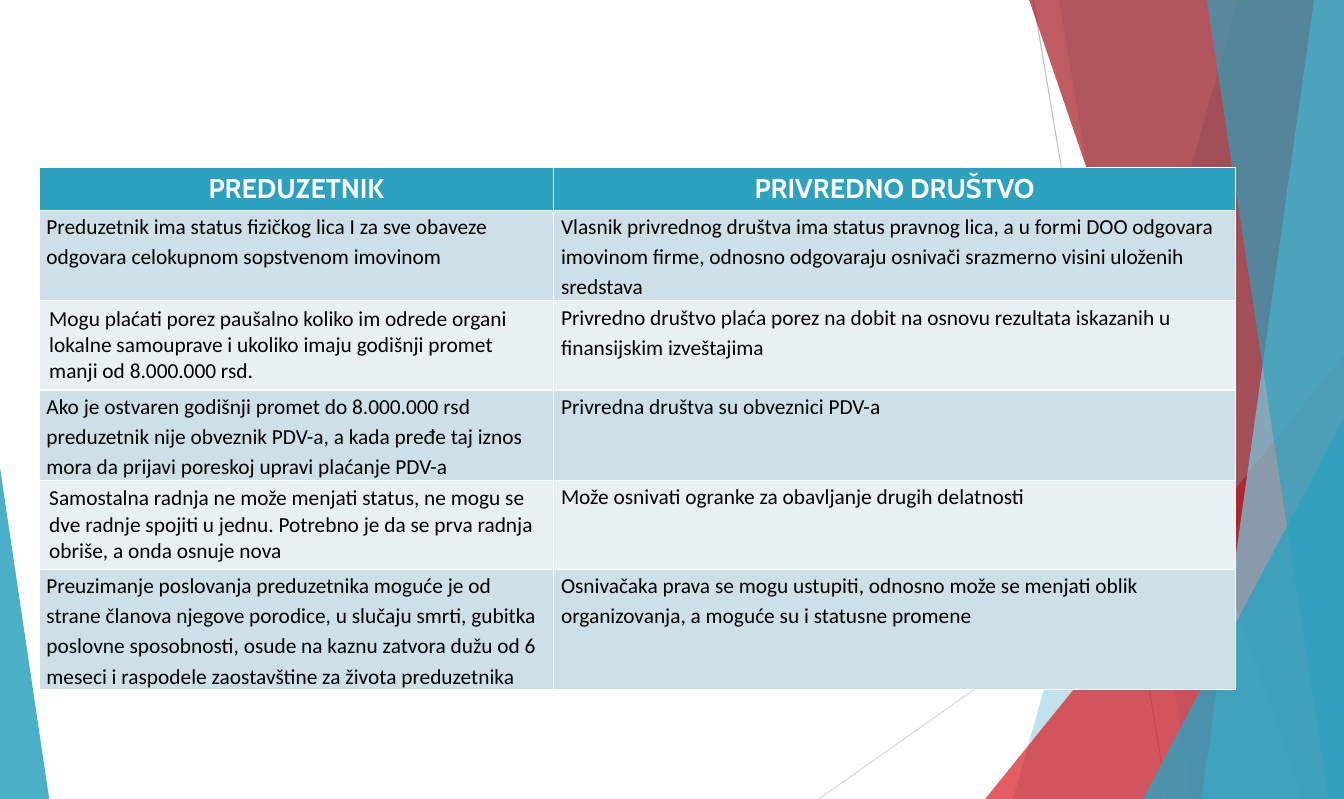
"""Build the slide comparing an entrepreneur with a company in Serbian law."""
from lxml import etree
from pptx import Presentation
from pptx.dml.color import RGBColor
from pptx.enum import shapes, text
from pptx.oxml import ns
from pptx.util import Cm, Pt

WHITE = RGBColor(0xFF, 0xFF, 0xFF)
BLACK = RGBColor(0, 0, 0)
TEAL = RGBColor(0x2D, 0xA2, 0xBF)
SKY = RGBColor(0x7A, 0xCB, 0xE0)
RED = RGBColor(0xDA, 0x1F, 0x28)
DARK_RED = RGBColor(0xA3, 0x17, 0x1E)
GREY = RGBColor(0xBF, 0xBF, 0xBF)
LIGHT_GREY = RGBColor(0xD9, 0xD9, 0xD9)
BAND = RGBColor(0xCD, 0xE0, 0xE8)
PALE = RGBColor(0xE8, 0xF0, 0xF4)
W, H = 33.3, 19.79


def write_cell(cell, words, fill, font="Calibri", size=15, color=BLACK, bold=False,
               align=text.PP_ALIGN.LEFT, spacing=None, inset=(0.25, 0.13)):
    cell.fill.solid()
    cell.fill.fore_color.rgb = fill
    cell.margin_left = cell.margin_right = Cm(inset[0])
    cell.margin_top = cell.margin_bottom = Cm(inset[1])
    p = cell.text_frame.paragraphs[0]
    p.alignment = align
    if spacing:
        p.line_spacing = spacing
    r = p.add_run()
    r.text = words
    r.font.name, r.font.size, r.font.bold = font, Pt(size), bold
    r.font.color.rgb = color


prs = Presentation()
prs.slide_width, prs.slide_height = Cm(W), Cm(H)
s = prs.slides.add_slide(prs.slide_layouts[6])

for x1, y1, x2, y2, color in [(25.6, 0, 28.93, H, GREY), (W, 10.62, 20.29, H, LIGHT_GREY)]:
    line = s.shapes.add_connector(shapes.MSO_CONNECTOR.STRAIGHT, Cm(x1), Cm(y1), Cm(x2), Cm(y2))
    line.line.color.rgb = color
    line.line.width = Pt(0.75)
    etree.SubElement(line._element.spPr, ns.qn("a:effectLst"))

facets = [
    ("band", (30.68, 25.1), TEAL, 30),
    ("band", (26.24, 29.54), TEAL, 20),
    ("triangle", (24.41, 8.79, 8.89, 1), RED, 72),
    ("band", (25.5, 32.26), DARK_RED, 70),
    ("band", (32.56, 29.77), SKY, 70),
    ("band", (29.9, 32.92), TEAL, 65),
    ("triangle", (28.32, 10.36, 4.98, 1), TEAL, 80),
    ("triangle", (0, 11.58, 1.22, 0), TEAL, 85),
]
for kind, place, color, opacity in facets:
    if kind == "band":
        top, bottom = place
        outline = s.shapes.build_freeform(Cm(top), 0)
        outline.add_line_segments([(Cm(W), 0), (Cm(W), Cm(H)), (Cm(bottom), Cm(H))])
        sp = outline.convert_to_shape()
    else:
        left, top, width, apex = place
        sp = s.shapes.add_shape(shapes.MSO_SHAPE.ISOSCELES_TRIANGLE,
                                Cm(left), Cm(top), Cm(width), Cm(H - top))
        sp.adjustments[0] = apex
    sp.shadow.inherit = False
    sp.line.fill.background()
    sp.fill.solid()
    sp.fill.fore_color.rgb = color
    rgb = sp._element.spPr.find(".//" + ns.qn("a:srgbClr"))
    etree.SubElement(rgb, ns.qn("a:alpha"), val=str(opacity * 1000))

rows = [
    ("Preduzetnik ima status fizičkog lica I za sve obaveze odgovara celokupnom sopstvenom imovinom",
     "Vlasnik privrednog društva ima status pravnog lica, a u formi DOO odgovara imovinom firme, "
     "odnosno odgovaraju osnivači srazmerno visini uloženih sredstava"),
    ("Mogu plaćati porez paušalno koliko im odrede organi lokalne samouprave i ukoliko imaju "
     "godišnji promet manji od 8.000.000 rsd.",
     "Privredno društvo plaća porez na dobit na osnovu rezultata iskazanih u finansijskim izveštajima"),
    ("Ako je ostvaren godišnji promet do 8.000.000 rsd preduzetnik nije obveznik PDV-a, "
     "a kada pređe taj iznos mora da prijavi poreskoj upravi plaćanje PDV-a",
     "Privredna društva su obveznici PDV-a"),
    ("Samostalna radnja ne može menjati status, ne mogu se dve radnje spojiti u jednu. "
     "Potrebno je da se prva radnja obriše, a onda osnuje nova",
     "Može osnivati ogranke za obavljanje drugih delatnosti"),
    ("Preuzimanje poslovanja preduzetnika moguće je od strane članova njegove porodice, u slučaju "
     "smrti, gubitka poslovne sposobnosti, osude na kaznu zatvora dužu od 6 meseci i raspodele "
     "zaostavštine za života preduzetnika",
     "Osnivačaka prava se mogu ustupiti, odnosno može se menjati oblik organizovanja, "
     "a moguće su i statusne promene"),
]
heights = [1.06, 2.23, 2.21, 2.23, 2.21, 2.98]
table = s.shapes.add_table(len(heights), 2, Cm(0.97), Cm(4.14), Cm(29.64), Cm(sum(heights))).table
for column, width in zip(table.columns, (12.75, 16.89)):
    column.width = Cm(width)
for row, height in zip(table.rows, heights):
    row.height = Cm(height)

for j, heading in enumerate(("PREDUZETNIK", "PRIVREDNO DRUŠTVO")):
    write_cell(table.cell(0, j), heading, TEAL, font="Cabin", size=19, color=WHITE, bold=True,
               align=text.PP_ALIGN.CENTER)
for i, row in enumerate(rows, 1):
    for j, words in enumerate(row):
        fill = BAND if i % 2 else PALE
        if j == 0 and fill == PALE:
            write_cell(table.cell(i, j), words, fill)
        else:
            write_cell(table.cell(i, j), words, fill, spacing=1.15, inset=(0.18, 0))

prs.save("out.pptx")
